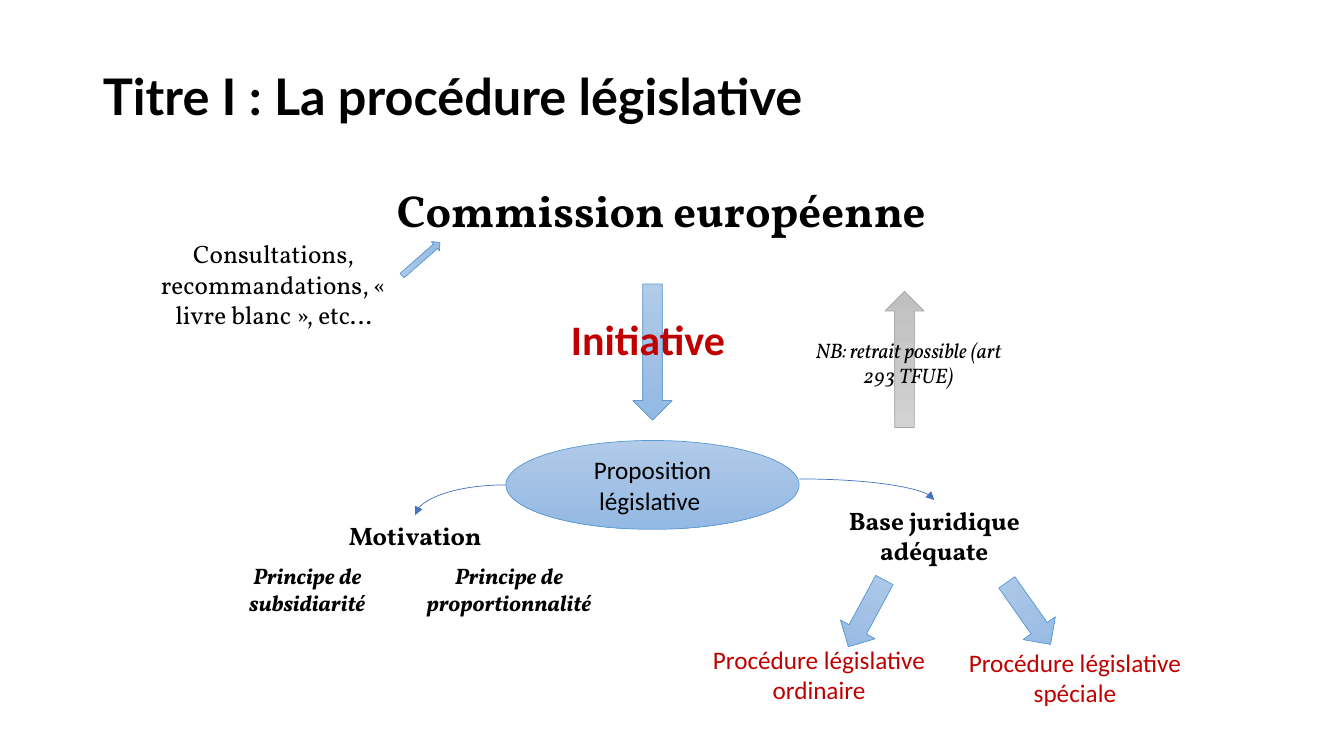
import copy
import dataclasses

import lxml.etree
import pptx
import pptx.dml.color
import pptx.enum.shapes
import pptx.enum.text
import pptx.oxml.ns
import pptx.util

Cm = pptx.util.Cm
Pt = pptx.util.Pt
SHAPES = pptx.enum.shapes.MSO_SHAPE
ALIGN = pptx.enum.text.PP_ALIGN
ANCHOR = pptx.enum.text.MSO_ANCHOR


@dataclasses.dataclass(frozen=True)
class Theme:
    heading_font: str = "Lato"
    serif: str = "Vollkorn"
    sans: str = "Calibri"
    ink: str = "000000"
    red: str = "C00000"
    gold: str = "FFC000"
    connector: str = "4472C4"
    blue: tuple = ("B1CBE9", "A3C1E5", "93B9E4")
    blue_line: str = "5B9BD5"
    grey: tuple = ("D2D2D2", "C8C8C8", "C0C0C0")
    grey_line: str = "A5A5A5"
    title: int = 36
    institution: int = 32
    initiative: int = 30
    normal: int = 18
    principle: int = 16
    remark: int = 15
    hairline: float = 0.5


THEME = Theme()

# Boxes are left, top, width, height in centimetres.
TITLE = ("Titre I : La procédure législative", (2.34, 1.68, 29.82, 16.31))
PROPOSAL = ("Proposition législative ", (12.75, 11.1, 7.39, 2.24))
MOTIVATION_BOX = (8.18, 12.98, 4.57, 1.02)
LEGAL_BASIS_BOX = (19.99, 12.6, 7.11, 1.8)

# text, box, font, size, colour, style ("b" bold, "i" italic)
LABELS = [
    ("Commission européenne", (9.75, 4.47, 14.99, 1.63), THEME.serif, THEME.institution, THEME.ink, "b"),
    ("Consultations, recommandations, « livre blanc », etc…", (3.68, 5.89, 6.43, 2.57),
     THEME.serif, THEME.normal, THEME.ink, ""),
    ("Motivation", MOTIVATION_BOX, THEME.serif, THEME.normal, THEME.ink, "b"),
    ("Base juridique adéquate", LEGAL_BASIS_BOX, THEME.serif, THEME.normal, THEME.ink, "b"),
    ("Principe de subsidiarité", (5.46, 14.05, 4.57, 1.63), THEME.serif, THEME.principle, THEME.ink, "bi"),
    ("Principe de proportionnalité", (10.34, 14.05, 4.98, 1.63), THEME.serif, THEME.principle, THEME.ink, "bi"),
    ("Procédure législative ordinaire", (17.68, 16.1, 5.92, 1.8), THEME.sans, THEME.normal, THEME.red, ""),
    ("Procédure législative spéciale", (24.13, 16.18, 5.92, 1.8), THEME.sans, THEME.normal, THEME.red, ""),
    ("NB: retrait possible (art 293 TFUE)", (20.27, 8.38, 5.26, 1.55),
     THEME.serif, THEME.remark, THEME.ink, "i"),
]
INITIATIVE = ("Initiative ", (14.1, 7.77, 4.7, 1.55), THEME.sans, THEME.initiative, THEME.red, "b")

# box, rotation, gradient, outline
ARROWS = [
    ((15.95, 7.16, 0.99, 3.43), 0, THEME.blue, THEME.blue_line),
    ((10.46, 5.89, 0.3, 1.27), 228.7, THEME.blue, THEME.blue_line),
    ((21.34, 14.5, 0.99, 1.91), 28.4, THEME.blue, THEME.blue_line),
    ((25.43, 14.5, 0.99, 1.91), 324.8, THEME.blue, THEME.blue_line),
    ((22.3, 7.34, 0.99, 3.43), 180, THEME.grey, THEME.grey_line),
]


def lengths(values):
    return [Cm(value) for value in values]


def rgb(colour):
    return pptx.dml.color.RGBColor.from_string(colour)


def add_run(paragraph, text, font, size, colour, style=""):
    run = paragraph.add_run()
    run.text = text
    run.font.name = font
    run.font.size = Pt(size)
    run.font.color.rgb = rgb(colour)
    run.font.bold = "b" in style
    run.font.italic = "i" in style
    return run


def add_title(slide):
    text, box = TITLE
    title = slide.shapes.title
    title.left, title.top, title.width, title.height = lengths(box)
    title.text_frame.vertical_anchor = ANCHOR.TOP
    title.text_frame.word_wrap = True
    paragraph = title.text_frame.paragraphs[0]
    paragraph.alignment = ALIGN.LEFT
    paragraph.line_spacing = 0.9
    paragraph.space_before = Pt(10)
    add_run(paragraph, text, THEME.heading_font, THEME.title, THEME.ink, "b")


def add_label(slide, text, box, font, size, colour, style, wrap=True, alignment=ALIGN.CENTER):
    frame = slide.shapes.add_textbox(*lengths(box)).text_frame
    frame.word_wrap = wrap
    frame.auto_size = pptx.enum.text.MSO_AUTO_SIZE.SHAPE_TO_FIT_TEXT
    paragraph = frame.paragraphs[0]
    paragraph.alignment = alignment
    return add_run(paragraph, text, font, size, colour, style)


def outline_text(run, colour):
    properties = run._r.get_or_add_rPr()
    line = lxml.etree.Element(pptx.oxml.ns.qn("a:ln"), w=str(Pt(1)))
    fill = lxml.etree.SubElement(line, pptx.oxml.ns.qn("a:solidFill"))
    lxml.etree.SubElement(fill, pptx.oxml.ns.qn("a:srgbClr"), val=colour)
    properties.insert(0, line)


def add_gradient_shape(slide, kind, box, colours, line_colour):
    """Add a shape with a three-stop gradient that runs downwards."""
    shape = slide.shapes.add_shape(kind, *lengths(box))
    shape.shadow.inherit = False
    shape.fill.gradient()
    shape.fill.gradient_angle = 270
    stop_list = shape._element.spPr.find(".//" + pptx.oxml.ns.qn("a:gsLst"))
    stop_list.insert(1, copy.deepcopy(stop_list[0]))
    for stop, colour, position in zip(shape.fill.gradient_stops, colours, (0, 0.5, 1)):
        stop.color.rgb = rgb(colour)
        stop.position = position
    shape.line.color.rgb = rgb(line_colour)
    shape.line.width = Pt(THEME.hairline)
    return shape


def add_curve(slide, start, end):
    """Draw a quarter curve that leaves sideways and arrives from above."""
    curve = slide.shapes.add_connector(
        pptx.enum.shapes.MSO_CONNECTOR.CURVE, *lengths(start + end))
    curve.line.color.rgb = rgb(THEME.connector)
    curve.line.width = Pt(THEME.hairline)
    properties = curve._element.spPr
    properties.find(pptx.oxml.ns.qn("a:prstGeom")).set("prst", "curvedConnector2")
    line = properties.find(pptx.oxml.ns.qn("a:ln"))
    lxml.etree.SubElement(line, pptx.oxml.ns.qn("a:tailEnd"), type="triangle")
    lxml.etree.SubElement(properties, pptx.oxml.ns.qn("a:effectLst"))


def top_middle(box):
    left, top, width, _ = box
    return (left + width / 2, top)


def add_proposal(slide):
    text, box = PROPOSAL
    ellipse = add_gradient_shape(slide, SHAPES.OVAL, box, THEME.blue, THEME.blue_line)
    ellipse.text_frame.word_wrap = True
    ellipse.text_frame.vertical_anchor = ANCHOR.MIDDLE
    paragraph = ellipse.text_frame.paragraphs[0]
    paragraph.alignment = ALIGN.CENTER
    add_run(paragraph, text, THEME.sans, THEME.normal, THEME.ink)

    left, top, width, height = box
    middle = top + height / 2
    add_curve(slide, (left, middle), top_middle(MOTIVATION_BOX))
    add_curve(slide, (left + width, middle - 0.15), top_middle(LEGAL_BASIS_BOX))


def main():
    presentation = pptx.Presentation()
    presentation.slide_width = Cm(33.87)
    presentation.slide_height = Cm(19.05)
    slide = presentation.slides.add_slide(presentation.slide_layouts.get_by_name("Title Only"))
    add_title(slide)
    for box, rotation, colours, line_colour in ARROWS:
        arrow = add_gradient_shape(slide, SHAPES.DOWN_ARROW, box, colours, line_colour)
        arrow.rotation = rotation
    add_proposal(slide)
    institution, *others = LABELS
    add_label(slide, *institution, alignment=ALIGN.LEFT)
    for label in others:
        add_label(slide, *label)
    outline_text(add_label(slide, *INITIATIVE, wrap=False), THEME.gold)
    presentation.save("out.pptx")


if __name__ == "__main__":
    main()
